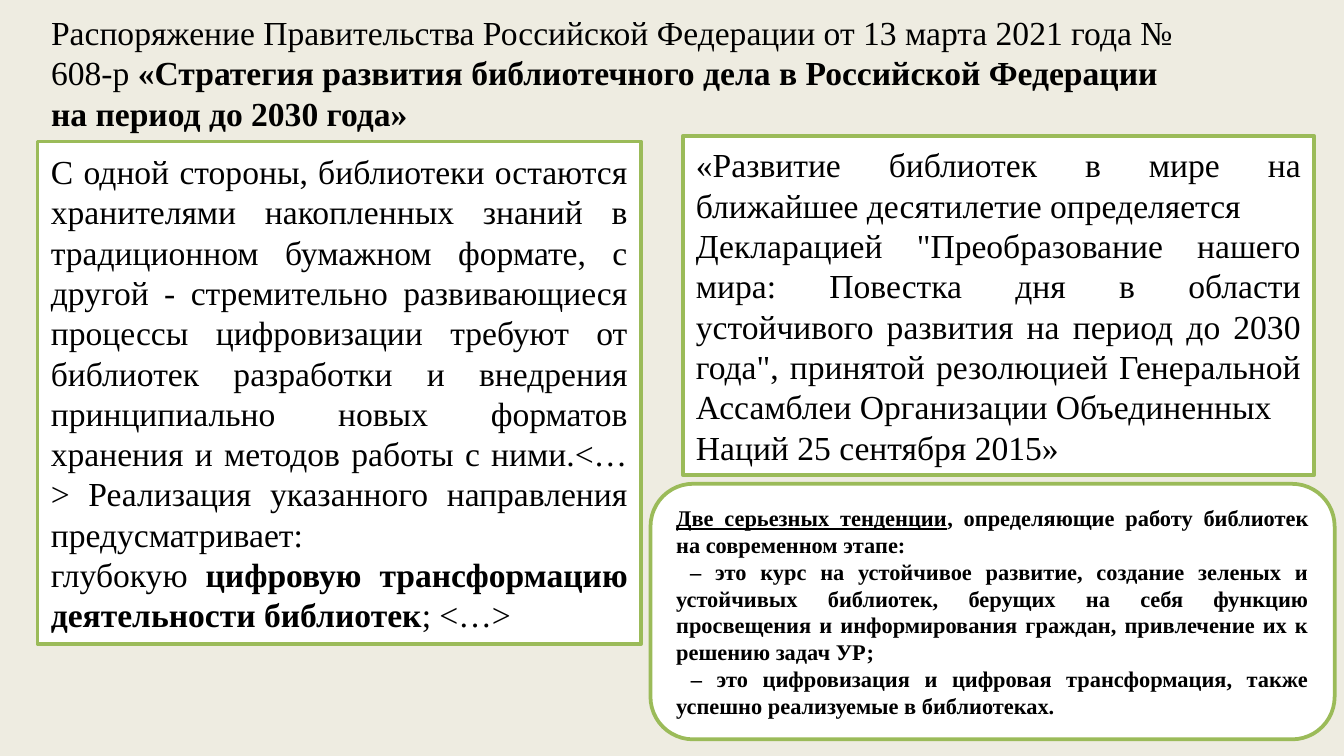
from pptx import Presentation
from pptx.dml.color import RGBColor
from pptx.enum.shapes import MSO_SHAPE
from pptx.enum.text import MSO_ANCHOR, MSO_AUTO_SIZE, PP_ALIGN
from pptx.util import Inches, Pt

WIDTH = Inches(10)
HEIGHT = WIDTH * 9 // 16
FONT = "Times New Roman"
BACKGROUND, PANEL, BORDER, INK = "EEECE1", "FFFFFF", "9BBB59", "000000"

HEADING = [[
    ("Распоряжение Правительства Российской Федерации от 13 марта 2021 года № 608-р ", {}),
    ("«Стратегия развития библиотечного дела в Российской Федерации на период до 2030 года»",
     {"bold": True}),
]]
DECLARATION = [
    [("«Развитие библиотек в мире на ближайшее десятилетие определяется", {})],
    [("Декларацией \"Преобразование нашего мира: Повестка дня в области устойчивого развития "
      "на период до 2030 года\", принятой резолюцией Генеральной Ассамблеи Организации "
      "Объединенных", {})],
    [("Наций 25 сентября 2015»", {})],
]
STRATEGY = [[
    ("С одной стороны, библиотеки остаются хранителями накопленных знаний в традиционном "
     "бумажном формате, с другой - стремительно развивающиеся процессы цифровизации требуют "
     "от библиотек разработки и внедрения принципиально новых форматов хранения и методов "
     "работы с ними.<…> Реализация указанного направления предусматривает:\nглубокую ", {}),
    ("цифровую трансформацию деятельности библиотек", {"bold": True}),
    ("; <…>", {}),
]]
TRENDS = [
    [("Две серьезных тенденции", {"underline": True}),
     (", определяющие работу библиотек на современном этапе: ", {})],
    [(" – это курс на устойчивое развитие, создание зеленых и устойчивых библиотек, берущих "
      "на себя функцию просвещения и информирования граждан, привлечение их к решению "
      "задач УР; ", {})],
    [(" – это цифровизация и цифровая трансформация, также успешно реализуемые в "
      "библиотеках. ", {})],
]


def color(value):
    """Turn a hex string into a colour."""
    return RGBColor.from_string(value)


def area(left, top, width, height):
    """Turn percentages of the slide's size into lengths."""
    return [round(share * side / 100)
            for share, side in zip((left, top, width, height), (WIDTH, HEIGHT) * 2)]


def write(frame, paragraphs, size=18, align=PP_ALIGN.JUSTIFY, anchor=MSO_ANCHOR.MIDDLE,
          bold=False):
    """Fill a text frame with paragraphs of formatted pieces."""
    frame.word_wrap = True
    frame.auto_size = MSO_AUTO_SIZE.SHAPE_TO_FIT_TEXT
    frame.vertical_anchor = anchor
    for index, pieces in enumerate(paragraphs):
        paragraph = frame.add_paragraph() if index else frame.paragraphs[0]
        paragraph.alignment = align
        for words, emphasis in pieces:
            for number, line in enumerate(words.split("\n")):
                if number:
                    paragraph.add_line_break()
                run = paragraph.add_run()
                run.text = line
                run.font.name = FONT
                run.font.size = Pt(size)
                run.font.color.rgb = color(INK)
                run.font.bold = emphasis.get("bold", bold)
                run.font.underline = emphasis.get("underline", False)


def add_heading(slide, place, paragraphs):
    """Place and fill the slide's title."""
    heading = slide.shapes.title
    heading.left, heading.top, heading.width, heading.height = place
    write(heading.text_frame, paragraphs, align=PP_ALIGN.LEFT, anchor=MSO_ANCHOR.TOP)


def add_panel(slide, place, paragraphs, outline=MSO_SHAPE.RECTANGLE, **text_format):
    """Add a white panel with a green border and text."""
    panel = slide.shapes.add_shape(outline, *place)
    panel.shadow.inherit = False
    panel.fill.solid()
    panel.fill.fore_color.rgb = color(PANEL)
    panel.line.color.rgb = color(BORDER)
    panel.line.width = Pt(2)
    write(panel.text_frame, paragraphs, **text_format)


def main():
    """Build and save the slide."""
    deck = Presentation()
    deck.slide_width, deck.slide_height = WIDTH, HEIGHT
    slide = deck.slides.add_slide(deck.slide_layouts.get_by_name("Title Only"))
    slide.background.fill.solid()
    slide.background.fill.fore_color.rgb = color(BACKGROUND)
    add_heading(slide, area(2.8, 0.7, 85.8, 18), HEADING)
    add_panel(slide, area(50.8, 18, 47, 44.8), DECLARATION)
    add_panel(slide, area(2.8, 18.7, 44.9, 66.5), STRATEGY)
    add_panel(slide, area(48.4, 64, 50.9, 33.8), TRENDS,
              outline=MSO_SHAPE.ROUNDED_RECTANGLE, size=12, bold=True)
    deck.save("out.pptx")


if __name__ == "__main__":
    main()
